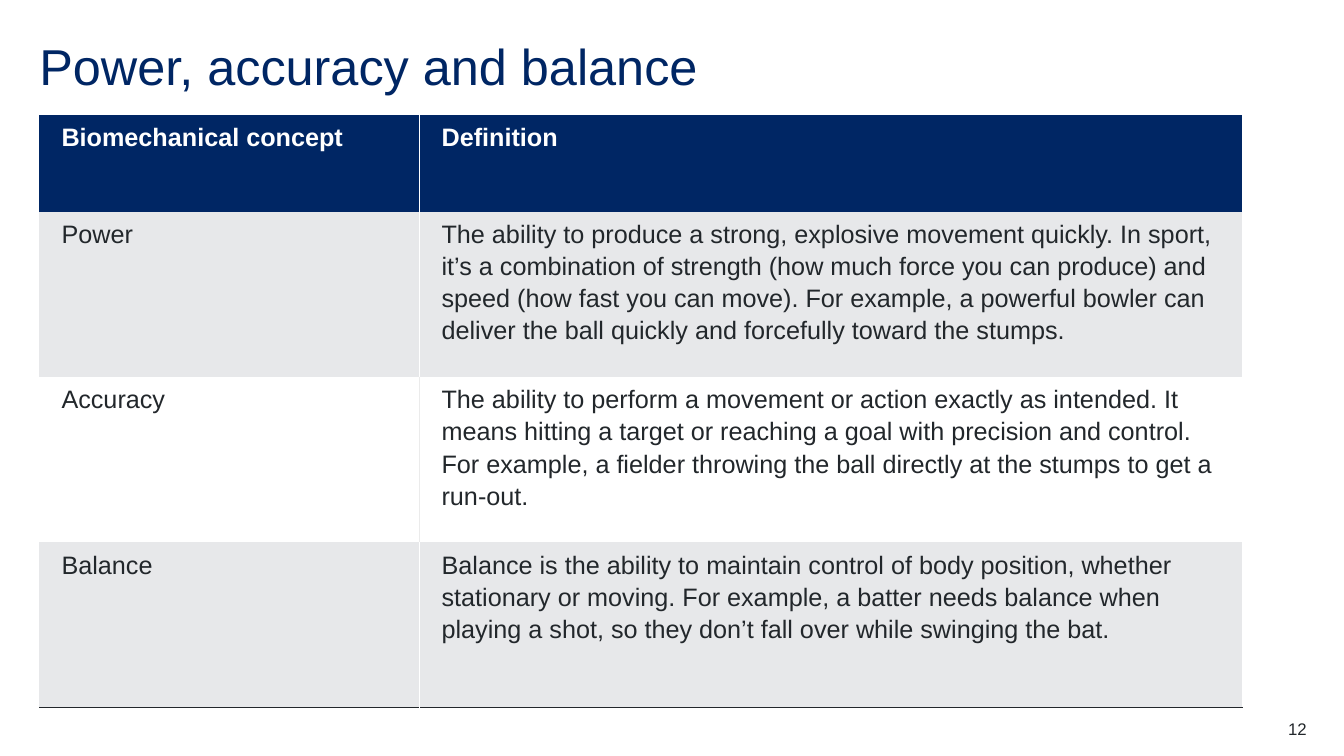
import dataclasses

import pptx
import pptx.dml.color
import pptx.enum.text
import pptx.oxml
import pptx.oxml.ns
import pptx.util

Inches = pptx.util.Inches
Pt = pptx.util.Pt
Align = pptx.enum.text.PP_ALIGN
Anchor = pptx.enum.text.MSO_ANCHOR

NAVY, INK, GREY, PALE, WHITE = "002664", "22272B", "E7E8EA", "EBEBEB", "FFFFFF"


@dataclasses.dataclass
class Row:
    term: str
    text: str
    fill: str = GREY
    ink: str = INK
    rule: str = WHITE
    height: float = 1.64
    bold: bool = False
    base: str | None = None


ROWS = [
    Row("Biomechanical concept", "Definition", fill=NAVY, ink=WHITE,
        height=0.96, bold=True),
    Row("Power",
        "The ability to produce a strong, explosive movement quickly. In sport, "
        "it’s a combination of strength (how much force you can produce) and "
        "speed (how fast you can move). For example, a powerful bowler can "
        "deliver the ball quickly and forcefully toward the stumps."),
    Row("Accuracy",
        "The ability to perform a movement or action exactly as intended. It "
        "means hitting a target or reaching a goal with precision and control. "
        "For example, a fielder throwing the ball directly at the stumps to get "
        "a run-out.", fill=WHITE, rule=PALE),
    Row("Balance",
        "Balance is the ability to maintain control of body position, whether "
        "stationary or moving. For example, a batter needs balance when "
        "playing a shot, so they don’t fall over while swinging the bat.",
        base=INK),
]
COLS = [3.77, 8.16]


def color(code: str) -> pptx.dml.color.RGBColor:
    return pptx.dml.color.RGBColor.from_string(code)


def write(frame, text: str, *, size: float, ink: str, bold: bool = False,
          align=Align.LEFT, space: float = 1, after: float = 0,
          indent: float = 0) -> None:
    """Put one formatted paragraph into a text frame."""
    para = frame.paragraphs[0]
    para.alignment = align
    para.line_spacing = space
    para.space_after = Pt(after)
    if indent:
        props = para._p.get_or_add_pPr()
        props.set("marL", str(Inches(indent)))
        props.set("indent", "0")
    run = para.add_run()
    run.text = text
    font = run.font
    font.name, font.size, font.bold = "Arial", Pt(size), bold
    font.color.rgb = color(ink)


def label(slide, text: str, left: float, top: float, width: float,
          height: float, **style) -> None:
    """Add a text box without margins."""
    box = slide.shapes.add_textbox(*map(Inches, (left, top, width, height)))
    frame = box.text_frame
    frame.word_wrap = True
    frame.vertical_anchor = Anchor.MIDDLE
    frame.margin_left = frame.margin_right = 0
    frame.margin_top = frame.margin_bottom = 0
    write(frame, text, **style)


def border(cell, side: str, code: str | None) -> None:
    """Draw one cell edge, or clear it when no colour is given."""
    paint = (f'<a:solidFill><a:srgbClr val="{code}"/></a:solidFill>'
             if code else "<a:noFill/>")
    cell._tc.get_or_add_tcPr().append(pptx.oxml.parse_xml(
        f'<a:ln{side} {pptx.oxml.ns.nsdecls("a")} w="{Pt(1)}">{paint}</a:ln{side}>'))


def grid(slide, left: float, top: float) -> None:
    """Add the table of concepts."""
    height = sum(row.height for row in ROWS)
    table = slide.shapes.add_table(
        len(ROWS), len(COLS), Inches(left), Inches(top),
        Inches(sum(COLS)), Inches(height)).table
    for col, width in zip(table.columns, COLS):
        col.width = Inches(width)
    for r, row in enumerate(ROWS):
        table.rows[r].height = Inches(row.height)
        for c, text in enumerate((row.term, row.text)):
            cell = table.cell(r, c)
            edges = {"L": row.rule if c else None,
                     "R": WHITE if c else row.rule,
                     "T": None, "B": row.base}
            for side, code in edges.items():
                border(cell, side, code)
            cell.fill.solid()
            cell.fill.fore_color.rgb = color(row.fill)
            write(cell.text_frame, text, size=18, ink=row.ink, bold=row.bold,
                  space=1.14, after=12, indent=0.12)


def main() -> None:
    deck = pptx.Presentation()
    deck.slide_width, deck.slide_height = Inches(13.33), Inches(7.5)
    slide = deck.slides.add_slide(deck.slide_layouts[6])

    # Title
    label(slide, "Power, accuracy and balance", 0.39, 0.39, 12.56, 0.6,
          size=36, ink=NAVY, space=0.9)
    # Concepts and definitions
    grid(slide, 0.39, 1.14)
    # Page number
    label(slide, "12", 12.17, 7.13, 0.79, 0.2,
          size=12, ink=INK, align=Align.RIGHT)

    deck.save("out.pptx")


if __name__ == "__main__":
    main()
